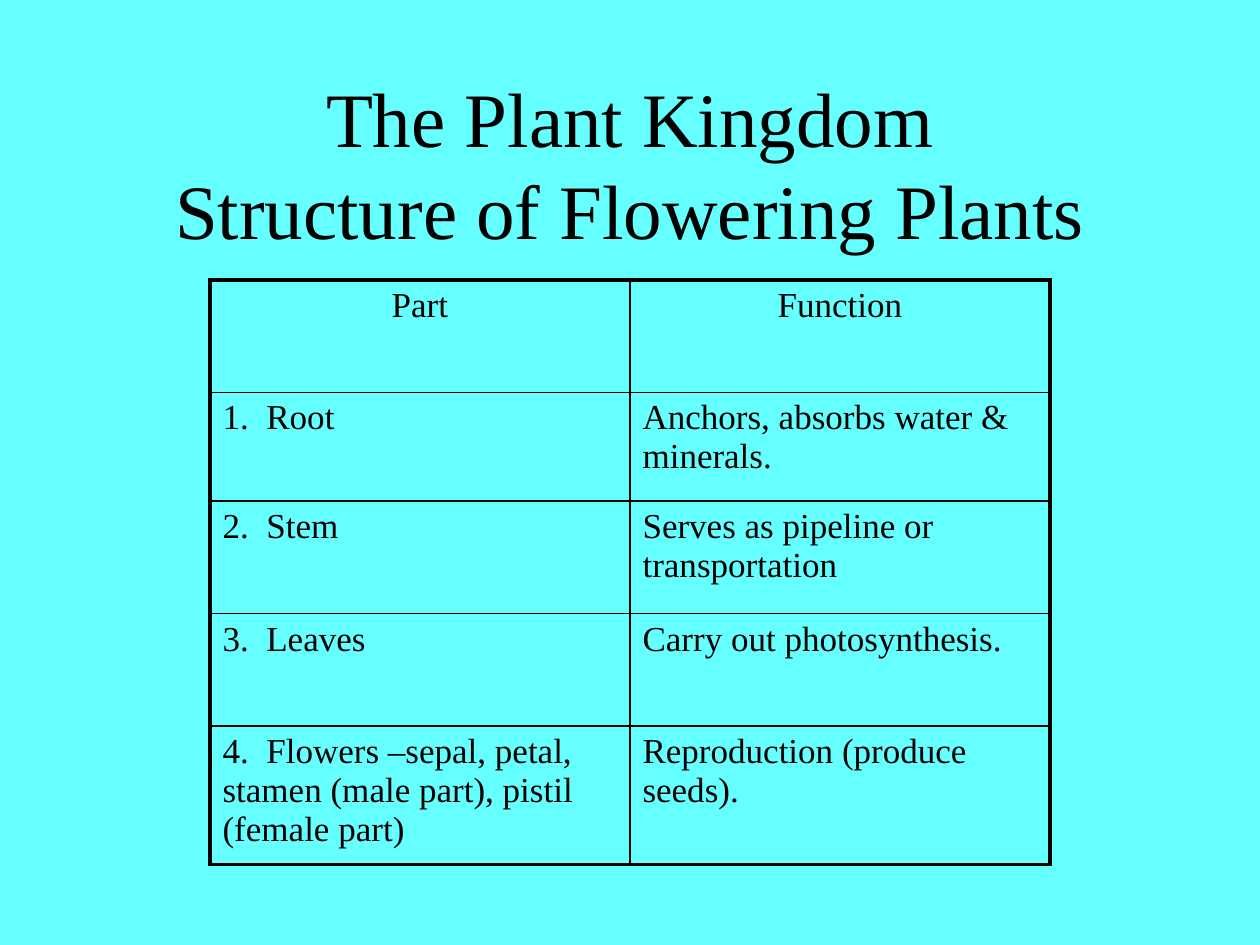
from pptx import Presentation
from pptx.dml.color import RGBColor
from pptx.enum.text import MSO_ANCHOR as Anchor, MSO_AUTO_SIZE as AutoSize, PP_ALIGN as Align
from pptx.oxml.ns import qn
from pptx.util import Inches, Pt
from lxml.etree import SubElement

TITLE = "The Plant Kingdom\vStructure of Flowering Plants"
PLANT_PARTS = [
    ("Part", "Function"),
    ("1.  Root", "Anchors, absorbs water & minerals."),
    ("2.  Stem", "Serves as pipeline or transportation"),
    ("3.  Leaves", "Carry out photosynthesis."),
    ("4.  Flowers –sepal, petal, stamen (male part), pistil (female part)",
     "Reproduction (produce seeds)."),
]
ROW_SHARES = [0.119, 0.115, 0.119, 0.119, 0.147]


def color(value):
    return RGBColor.from_string(value)


def apply(target, formats):
    for name, value in formats.items():
        setattr(target, name, value)


class SlideBuilder:
    ink = "000000"
    paper = "66FFFF"
    font = "Times New Roman"
    outer, inner = 2.25, 1

    def __init__(self, deck):
        self.width, self.height = deck.slide_width, deck.slide_height
        self.slide = deck.slides.add_slide(deck.slide_layouts[5])
        background = self.slide.background.fill
        background.solid()
        background.fore_color.rgb = color(self.paper)

    def box(self, left, top, width, height):
        return (round(left * self.width), round(top * self.height),
                round(width * self.width), round(height * self.height))

    def style(self, frame, size, align):
        for paragraph in frame.paragraphs:
            paragraph.alignment = align
            for run in paragraph.runs:
                apply(run.font, {"name": self.font, "size": Pt(size)})
                run.font.color.rgb = color(self.ink)

    def title(self, text, place):
        heading = self.slide.shapes.title
        apply(heading, dict(zip(("left", "top", "width", "height"), self.box(*place))))
        frame = heading.text_frame
        frame.text = text
        apply(frame, {"auto_size": AutoSize.NONE, "word_wrap": True,
                      "vertical_anchor": Anchor.MIDDLE})
        self.style(frame, 44, Align.CENTER)

    def borders(self, cell, widths):
        properties = cell._tc.get_or_add_tcPr()
        for side, width in widths.items():
            line = SubElement(properties, qn(f"a:ln{side}"), w=str(Pt(width)))
            fill = SubElement(line, qn("a:solidFill"))
            SubElement(fill, qn("a:srgbClr"), val=self.ink)

    def table(self, rows, row_shares, left, top, width):
        last_row, last_column = len(rows) - 1, len(rows[0]) - 1
        place = self.box(left, top, width, sum(row_shares))
        grid = self.slide.shapes.add_table(len(rows), len(rows[0]), *place).table
        apply(grid, {"first_row": False, "horz_banding": False})
        for row, share in zip(grid.rows, row_shares):
            row.height = round(share * self.height)
        for r, texts in enumerate(rows):
            for c, text in enumerate(texts):
                cell = grid.cell(r, c)
                cell.text = text
                self.style(cell.text_frame, 20, Align.LEFT if r else Align.CENTER)
                edges = {"L": c == 0, "R": c == last_column,
                         "T": r == 0, "B": r == last_row}
                self.borders(cell, {side: self.outer if edge else self.inner
                                    for side, edge in edges.items()})
                cell.fill.background()


def main():
    deck = Presentation()
    apply(deck, {"slide_width": Inches(10), "slide_height": Inches(7.5)})
    builder = SlideBuilder(deck)
    builder.title(TITLE, (0.075, 4 / 45, 0.85, 1 / 6))
    builder.table(PLANT_PARTS, ROW_SHARES, 1 / 6, 8 / 27, 2 / 3)
    deck.save("out.pptx")


if __name__ == "__main__":
    main()
